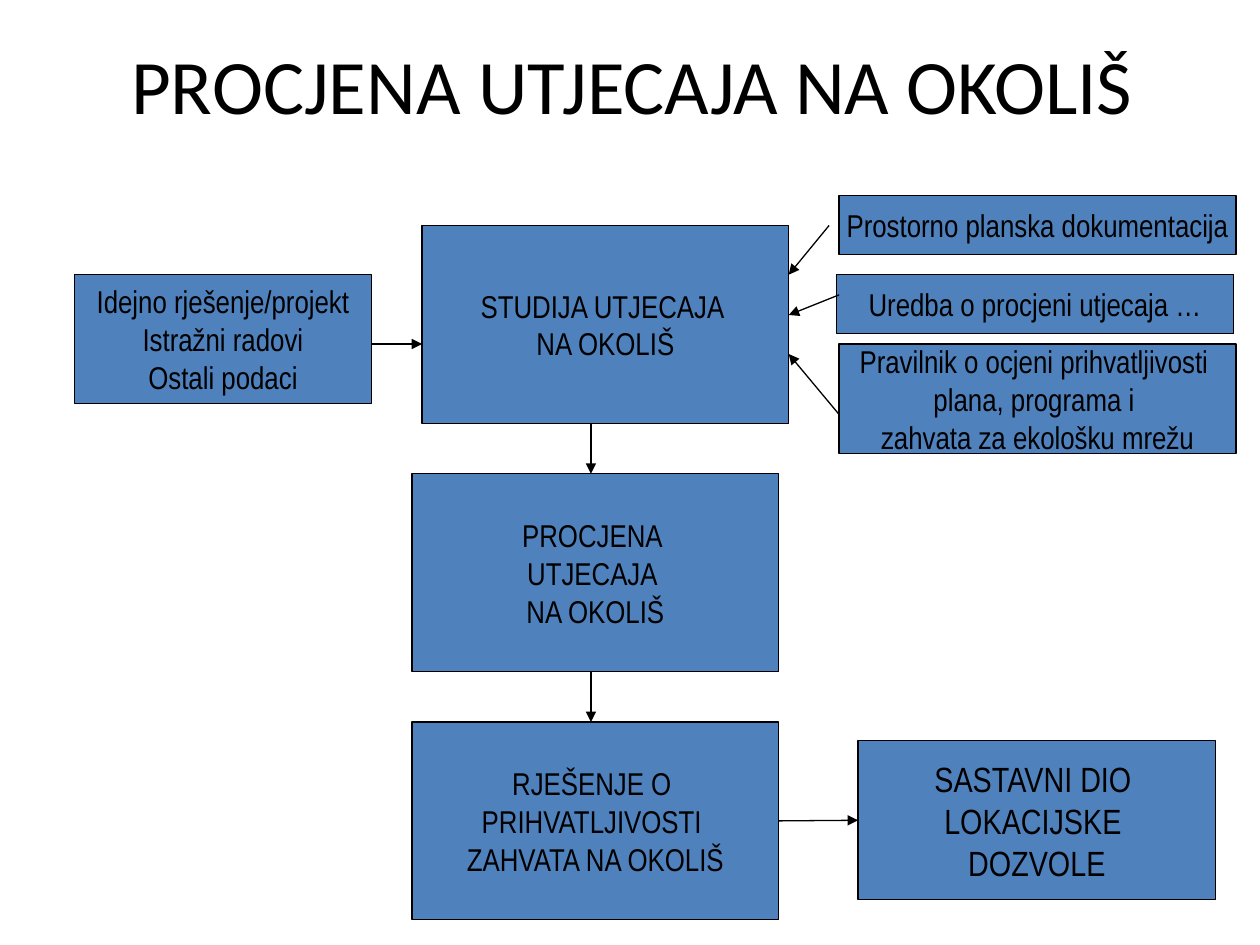
from pptx import Presentation
from pptx.dml.color import RGBColor
from pptx.enum.shapes import MSO_CONNECTOR, MSO_SHAPE
from pptx.enum.text import MSO_ANCHOR, PP_ALIGN
from pptx.oxml.ns import qn
from pptx.util import Inches, Pt
from lxml.etree import SubElement

COLORS = {"box": "4F81BD", "ink": "000000"}


def color(name):
    return RGBColor.from_string(COLORS[name])


def apply_format(target, values):
    for name, value in values.items():
        setattr(target, name, value)


class FlowSlide:
    line_width = Pt(0.75)
    box_font = "Arial Narrow"
    title_font = "Calibri"

    def __init__(self, presentation):
        self.slide = presentation.slides.add_slide(presentation.slide_layouts[5])

    def fill_text(self, shape, lines, font, size, wrap):
        frame = shape.text_frame
        apply_format(frame, {"word_wrap": wrap, "vertical_anchor": MSO_ANCHOR.MIDDLE})
        frame.text = "\n".join(lines)
        for paragraph in frame.paragraphs:
            paragraph.alignment = PP_ALIGN.CENTER
            for run in paragraph.runs:
                apply_format(run.font, {"name": font, "size": Pt(size)})
                run.font.color.rgb = color("ink")

    def title(self, text, left, top, width, height):
        shape = self.slide.shapes.title
        apply_format(shape, {
            "left": Inches(left), "top": Inches(top),
            "width": Inches(width), "height": Inches(height),
        })
        self.fill_text(shape, [text], self.title_font, 44, True)

    def outline(self, line):
        line.color.rgb = color("ink")
        line.width = self.line_width

    def box(self, lines, left, top, width, height, size=18):
        shape = self.slide.shapes.add_shape(
            MSO_SHAPE.RECTANGLE,
            Inches(left), Inches(top), Inches(width), Inches(height))
        shape.shadow.inherit = False
        shape.fill.solid()
        shape.fill.fore_color.rgb = color("box")
        self.outline(shape.line)
        self.fill_text(shape, lines, self.box_font, size, False)
        return shape

    def arrow(self, start, end):
        connector = self.slide.shapes.add_connector(
            MSO_CONNECTOR.STRAIGHT, *map(Inches, start + end))
        self.outline(connector.line)
        properties = connector._element.spPr
        SubElement(properties.find(qn("a:ln")), qn("a:tailEnd"), type="triangle")
        SubElement(properties, qn("a:effectLst"))
        return connector


def main():
    presentation = Presentation()
    apply_format(presentation, {"slide_width": Inches(10), "slide_height": Inches(7.5)})
    flow = FlowSlide(presentation)
    flow.title("PROCJENA UTJECAJA NA OKOLIŠ", 0.52, 0.04, 9, 1.25)

    stage_size = (2.91, 1.57)
    flow.box(["STUDIJA UTJECAJA ", "NA OKOLIŠ"], 3.35, 1.79, *stage_size)
    flow.box(["PROCJENA ", "UTJECAJA ", "NA OKOLIŠ"], 3.27, 3.76, *stage_size)
    decision = flow.box(["RJEŠENJE O ", "PRIHVATLJIVOSTI ", "ZAHVATA NA OKOLIŠ"],
                        3.27, 5.73, *stage_size)
    flow.box(["Idejno rješenje/projekt", "Istražni radovi", "Ostali podaci"],
             0.59, 2.18, 2.36, 1.02)
    permit = flow.box(["SASTAVNI DIO ", "LOKACIJSKE ", "DOZVOLE"],
                      6.81, 5.88, 2.84, 1.26, size=20)

    regulations = [
        (["Prostorno planska dokumentacija"], 6.66, 1.55, 0.47),
        (["Uredba o procjeni utjecaja …"], 6.64, 2.18, 0.47),
        (["Pravilnik o ocjeni prihvatljivosti ", "plana, programa i ",
          "zahvata za ekološku mrežu"], 6.66, 2.73, 0.87),
    ]
    for lines, left, top, height in regulations:
        flow.box(lines, left, top, 3.15, height)

    arrows = [
        ((2.95, 2.73), (3.35, 2.73)),
        ((6.58, 1.79), (6.26, 2.18)),
        ((6.66, 2.34), (6.26, 2.5)),
        ((6.66, 3.29), (6.26, 2.81)),
        ((4.69, 3.36), (4.69, 3.76)),
        ((4.69, 5.33), (4.69, 5.73)),
    ]
    for start, end in arrows:
        flow.arrow(start, end)

    permit_arrow = flow.arrow((6.18, 6.51), (6.81, 6.51))
    permit_arrow.begin_connect(decision, 3)
    permit_arrow.end_connect(permit, 1)

    presentation.save("out.pptx")


if __name__ == "__main__":
    main()
